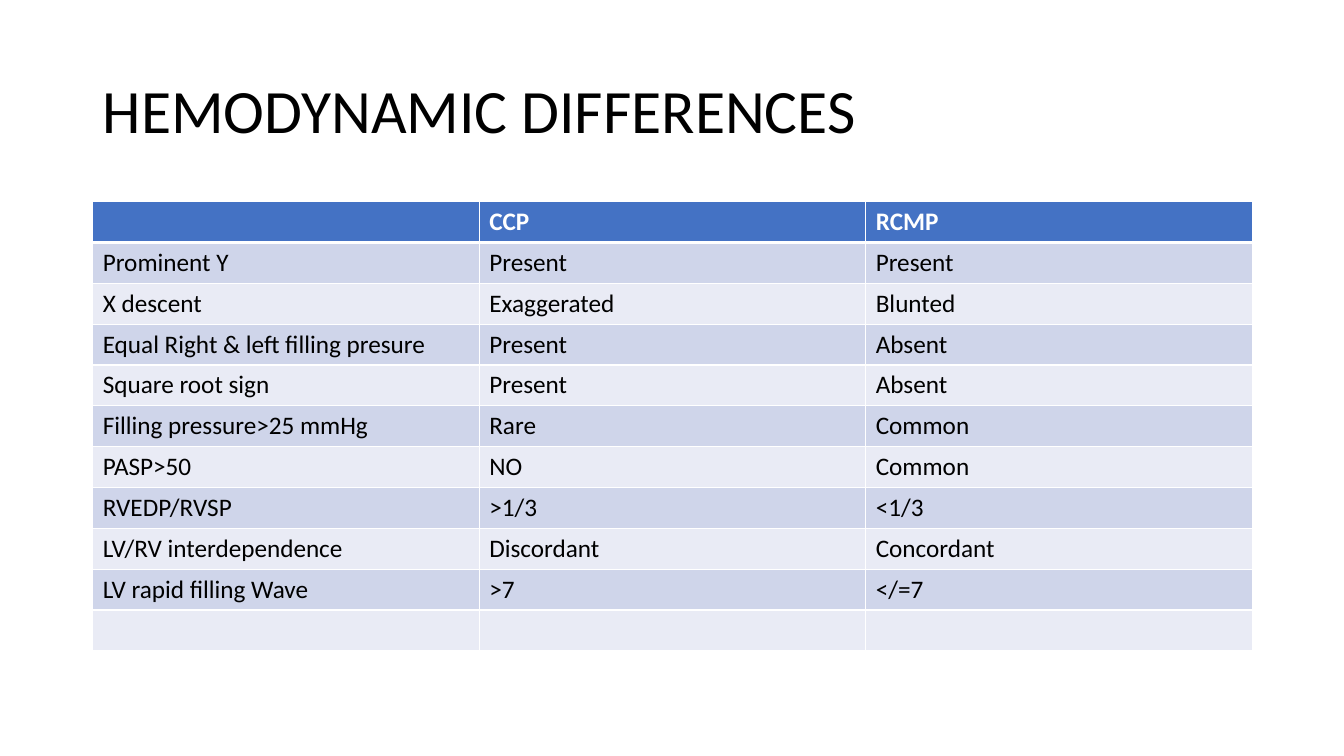
from dataclasses import dataclass

from lxml import etree
from pptx import Presentation, util as u
from pptx.dml.color import RGBColor
from pptx.enum import text
from pptx.oxml import ns


@dataclass(frozen=True)
class Theme:
    font: str = "Calibri"
    title_size: int = 44
    cell_size: int = 18
    ink: str = "000000"
    white: str = "FFFFFF"
    header: str = "4472C4"
    bands: tuple = ("CFD5EA", "E9EBF5")
    thin: int = 1
    thick: int = 3


THEME = Theme()

ROWS = [
    ("", "CCP", "RCMP"),
    ("Prominent Y", "Present", "Present"),
    ("X descent", "Exaggerated", "Blunted"),
    ("Equal Right & left filling presure", "Present", "Absent"),
    ("Square root sign", "Present", "Absent"),
    ("Filling pressure>25 mmHg", "Rare", "Common"),
    ("PASP>50", "NO", "Common"),
    ("RVEDP/RVSP", ">1/3", "<1/3"),
    ("LV/RV interdependence", "Discordant", "Concordant"),
    ("LV rapid filling Wave", ">7", "</=7"),
    ("", "", ""),
]


def add_run(p, words, size, color, bold=False):
    r = p.add_run()
    r.text = words
    r.font.name = THEME.font
    r.font.size = u.Pt(size)
    r.font.bold = bold
    r.font.color.rgb = RGBColor.from_string(color)


def add_title(s, words, left, top, width, height):
    tf = s.shapes.add_textbox(left, top, width, height).text_frame
    tf.word_wrap = True
    tf.vertical_anchor = text.MSO_ANCHOR.MIDDLE
    p = tf.paragraphs[0]
    p.line_spacing = 0.9
    add_run(p, words, THEME.title_size, THEME.ink)


def set_borders(cell, top, bottom):
    """White lines on all four sides; widths in points."""
    tc_pr = cell._tc.get_or_add_tcPr()
    widths = {"L": THEME.thin, "R": THEME.thin, "T": top, "B": bottom}
    for side, width in widths.items():
        ln = etree.SubElement(tc_pr, ns.qn(f"a:ln{side}"), w=str(u.Pt(width)))
        fill = etree.SubElement(ln, ns.qn("a:solidFill"))
        etree.SubElement(fill, ns.qn("a:srgbClr"), val=THEME.white)


def style_cell(cell, row, words):
    is_header = row == 0
    set_borders(cell,
                top=THEME.thick if row == 1 else THEME.thin,
                bottom=THEME.thick if is_header else THEME.thin)
    cell.fill.solid()
    color = THEME.header if is_header else THEME.bands[(row - 1) % 2]
    cell.fill.fore_color.rgb = RGBColor.from_string(color)
    if words:
        add_run(cell.text_frame.paragraphs[0], words, THEME.cell_size,
                THEME.white if is_header else THEME.ink, bold=is_header)


def add_comparison(s, rows, left, top, width, height):
    frame = s.shapes.add_table(len(rows), len(rows[0]), left, top, width, height)
    for i, row in enumerate(rows):
        for j, words in enumerate(row):
            style_cell(frame.table.cell(i, j), i, words)


def main():
    prs = Presentation()
    prs.slide_width, prs.slide_height = u.Inches(13.33), u.Inches(7.5)
    s = prs.slides.add_slide(prs.slide_layouts[6])
    left, width = u.Inches(0.92), u.Inches(11.5)

    # Title
    add_title(s, "HEMODYNAMIC DIFFERENCES", left, u.Inches(0.4), width, u.Inches(1.45))

    # Comparison table
    add_comparison(s, ROWS, left, u.Inches(2), width, u.Inches(4.46))

    prs.save("out.pptx")


if __name__ == "__main__":
    main()
